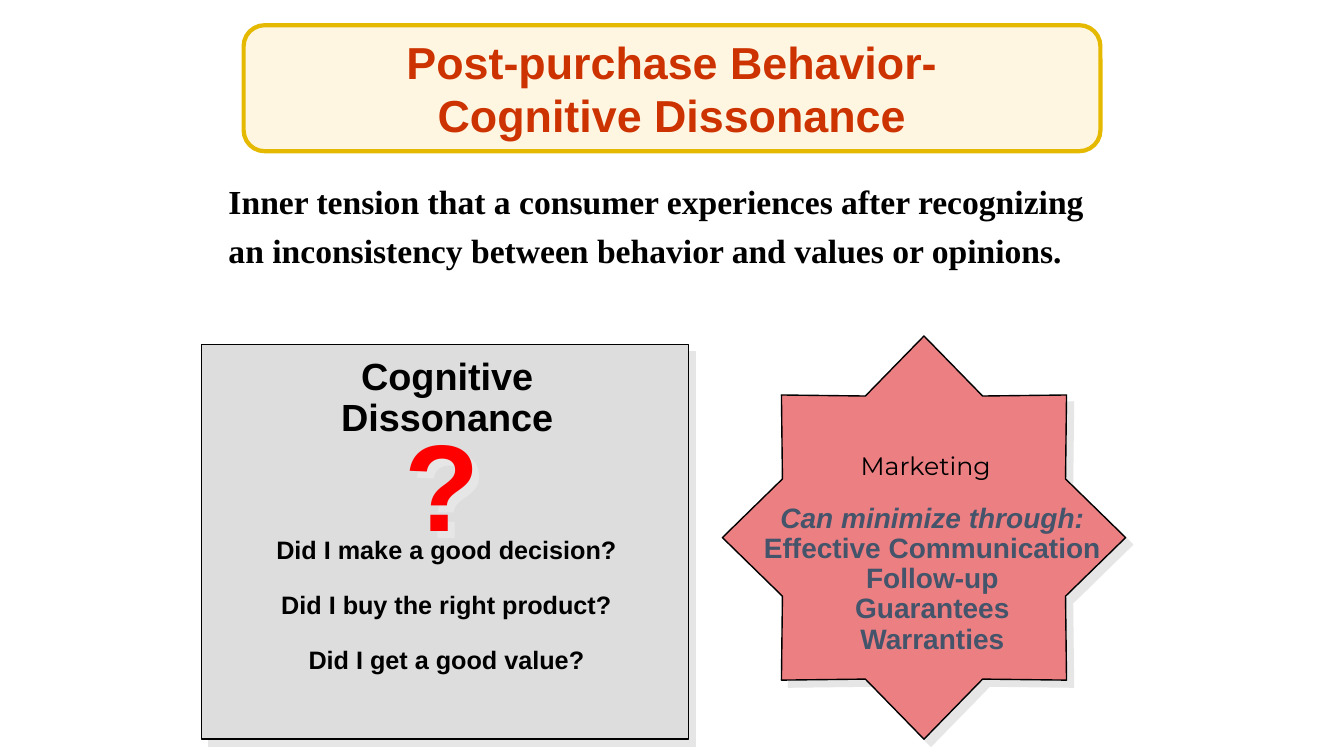
from dataclasses import dataclass

from lxml import etree
from pptx import Presentation
from pptx.dml.color import RGBColor
from pptx.enum.shapes import MSO_SHAPE
from pptx.enum.text import MSO_ANCHOR, MSO_AUTO_SIZE, PP_ALIGN
from pptx.oxml import parse_xml
from pptx.oxml.ns import nsdecls, qn
from pptx.util import Inches, Pt

ROUND_RECT, RECT, STAR = (MSO_SHAPE.ROUNDED_RECTANGLE, MSO_SHAPE.RECTANGLE,
                          MSO_SHAPE.STAR_8_POINT)
LEFT, CENTER = PP_ALIGN.LEFT, PP_ALIGN.CENTER
TOP, MIDDLE = MSO_ANCHOR.TOP, MSO_ANCHOR.MIDDLE
NO_AUTOFIT = MSO_AUTO_SIZE.NONE
COLUMNS, ROWS = 160, 90
WIDTH, HEIGHT = Inches(13.33), Inches(7.5)


@dataclass(frozen=True)
class Theme:
    sans: str = "Arial"
    serif: str = "Times New Roman"
    label_font: str = "Montserrat"
    ink: str = "000000"
    title: str = "CC3300"
    cream: str = "FFF6E1"
    gold: str = "E4B900"
    panel: str = "DDDDDD"
    star: str = "EB7F82"
    slate: str = "44546A"
    alert: str = "FF0000"
    shadow: str = "E7E6E6"
    title_size: int = 32
    heading_size: int = 27
    body_size: int = 24
    remedy_size: int = 20
    small_size: int = 18
    mark_size: int = 88


class SlideBuilder:
    def __init__(self, prs, theme):
        self.theme = theme
        self.slide = prs.slides.add_slide(prs.slide_layouts[1])

    def box(self, cell):
        """Turn (column, row, columns, rows) into slide lengths."""
        x, y, w, h = cell
        return [int(v) for v in (WIDTH * x / COLUMNS, HEIGHT * y / ROWS,
                                 WIDTH * w / COLUMNS, HEIGHT * h / ROWS)]

    def cast_shadow(self, sp):
        """Give a shape a hard shadow down and to the right."""
        effects = sp.element.spPr.find(qn("a:effectLst"))
        if effects is None:
            effects = etree.SubElement(sp.element.spPr, qn("a:effectLst"))
        effects.append(parse_xml(
            f'<a:outerShdw {nsdecls("a")} blurRad="0" dist="90000" dir="2700000" '
            f'algn="ctr" rotWithShape="0"><a:srgbClr val="{self.theme.shadow}"/>'
            '</a:outerShdw>'))

    def set_text(self, sp, lines, font, align=CENTER, anchor=TOP, **spacing):
        """Fill a shape with paragraphs; italics apply to the first one only."""
        tf = sp.text_frame
        frame = dict(word_wrap=True, auto_size=NO_AUTOFIT, vertical_anchor=anchor)
        for name, value in frame.items():
            setattr(tf, name, value)
        font = dict(font)
        color = RGBColor.from_string(font.pop("color"))
        size = Pt(font.pop("size"))
        for i, line in enumerate(lines):
            p = tf.paragraphs[0] if i == 0 else tf.add_paragraph()
            p.alignment = align
            for name, value in spacing.items():
                setattr(p, name, value)
            r = p.add_run()
            r.text = line
            for name, value in dict(font, size=size).items():
                setattr(r.font, name, value)
            r.font.color.rgb = color
            if font.get("italic"):
                font["italic"] = False

    def shape(self, kind, cell, fill, line, weight, shadow=False):
        sp = self.slide.shapes.add_shape(kind, *self.box(cell))
        sp.shadow.inherit = False
        sp.fill.solid()
        sp.fill.fore_color.rgb = RGBColor.from_string(fill)
        sp.line.color.rgb = RGBColor.from_string(line)
        sp.line.width = Pt(weight)
        if shadow:
            self.cast_shadow(sp)
        return sp

    def text(self, cell, lines, font, shadow=False, **spacing):
        sp = self.slide.shapes.add_textbox(*self.box(cell))
        self.set_text(sp, lines, font, **spacing)
        if shadow:
            self.cast_shadow(sp)

    def placeholder(self, index, cell, lines, font, **spacing):
        sp = self.slide.placeholders[index]
        sp.left, sp.top, sp.width, sp.height = self.box(cell)
        self.set_text(sp, lines, font, **spacing)
        return sp

    def title(self, cell, lines, font):
        """Set the title on a rounded card that lies behind it."""
        t = self.theme
        sp = self.placeholder(0, cell, lines, font, anchor=MIDDLE)
        card = self.shape(ROUND_RECT, cell, t.cream, t.gold, 3)
        sp.element.addprevious(card.element)

    def body(self, cell, lines, font, **spacing):
        """Fill the body placeholder with plain, unbulleted text."""
        sp = self.placeholder(1, cell, lines, font, align=LEFT, **spacing)
        for p in sp.text_frame.paragraphs:
            pPr = p._p.get_or_add_pPr()
            pPr.set("marL", "0")
            pPr.set("indent", "0")
            etree.SubElement(pPr, qn("a:buNone"))


def main():
    prs = Presentation()
    prs.slide_width, prs.slide_height = WIDTH, HEIGHT
    t = Theme()
    s = SlideBuilder(prs, t)
    bold = dict(name=t.sans, bold=True, color=t.ink)

    s.title((29, 3, 102, 15), ["Post-purchase Behavior-", "Cognitive Dissonance"],
            dict(bold, size=t.title_size, color=t.title))
    s.body((26, 20, 108, 12.7),
           ["Inner tension that a consumer experiences after recognizing "
            "an inconsistency between behavior and values or opinions."],
           dict(bold, name=t.serif, size=t.body_size),
           line_spacing=1.2, space_before=Pt(0))

    s.shape(RECT, (24, 41, 58, 47), t.panel, t.ink, 1, shadow=True)
    s.text((30, 42, 46.5, 11), ["Cognitive Dissonance"],
           dict(bold, size=t.heading_size), line_spacing=0.9)
    s.text((47, 50, 13.2, 17), ["?"],
           dict(bold, size=t.mark_size, color=t.alert),
           shadow=True, align=LEFT, line_spacing=0.9)
    s.text((31.5, 63.4, 43.3, 17),
           ["Did I make a good decision?", "Did I buy the right product?",
            "Did I get a good value?"],
           dict(bold, size=t.small_size), line_spacing=0.9, space_after=Pt(20))

    star = s.shape(STAR, (86, 40, 48, 48), t.star, t.ink, 1, shadow=True)
    star.adjustments[0] = 0.38
    s.text((88, 59.4, 46, 19.2),
           ["Can minimize through:", "Effective Communication", "Follow-up",
            "Guarantees", "Warranties"],
           dict(bold, size=t.remedy_size, color=t.slate, italic=True),
           line_spacing=0.9)
    s.text((95, 53, 30.4, 6.4), ["Marketing"],
           dict(name=t.label_font, size=t.small_size, color=t.ink))

    prs.save("out.pptx")


if __name__ == "__main__":
    main()
